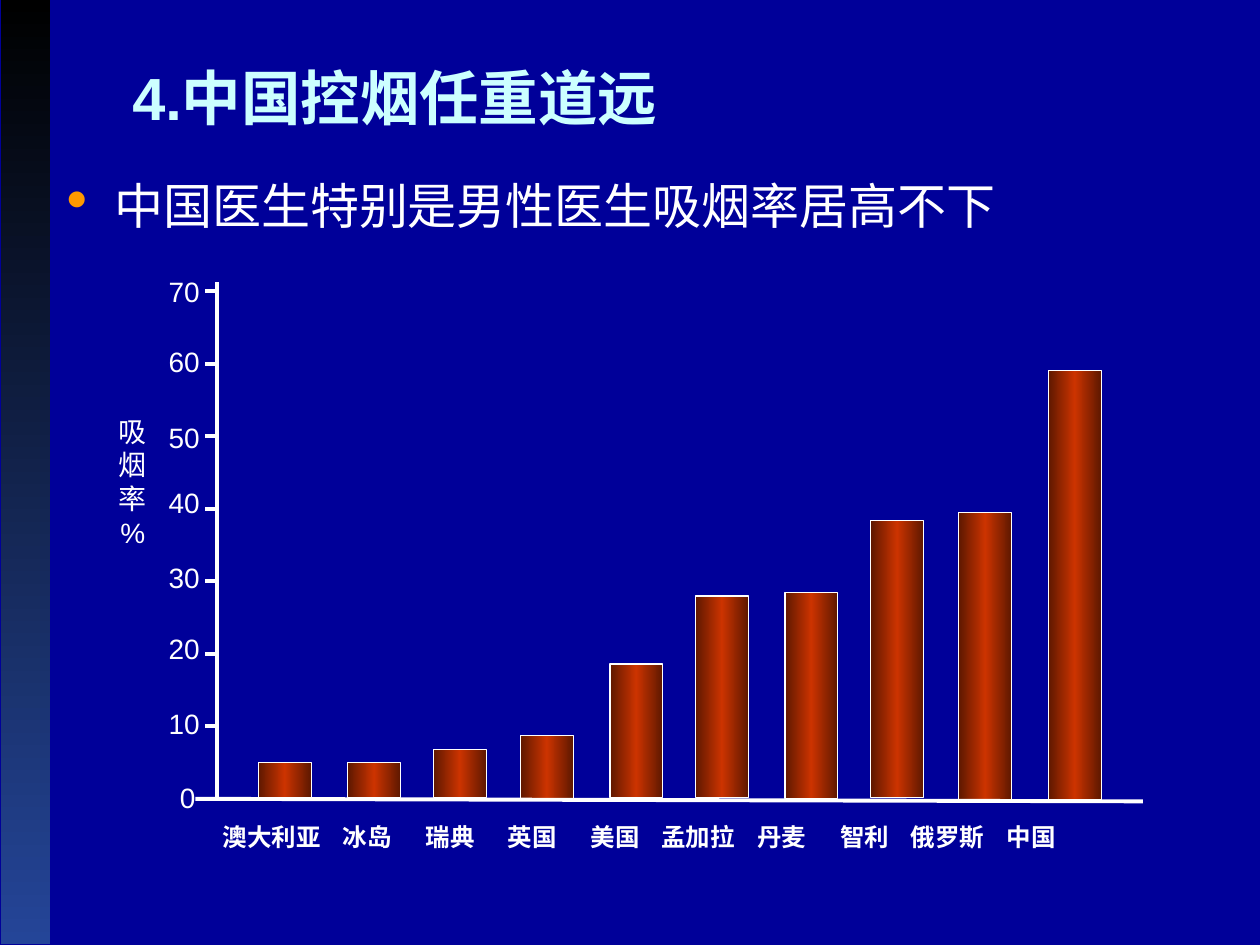
from copy import deepcopy

from lxml import etree
from pptx import Presentation
from pptx.dml.color import RGBColor
from pptx.enum import shapes, text
from pptx.oxml import ns
from pptx.util import Inches, Pt

COLORS = {
    "background": "000099", "white": "FFFFFF", "title": "CCFFFF", "bullet": "FF9900",
    "black": "000000", "strip": "244598", "bar_edge": "5E1800", "bar_middle": "CC3300",
}


def add_text(words, left, top, width, height, size, color="white", bold=False):
    """Add a wrapped one-paragraph text box and return it with its paragraph."""
    box = slide.shapes.add_textbox(Inches(left), Inches(top), Inches(width), Inches(height))
    box.text_frame.word_wrap = True
    paragraph = box.text_frame.paragraphs[0]
    run = paragraph.add_run()
    run.text = words
    run.font.name = "Arial"
    run.font.size = Pt(size)
    run.font.bold = bold
    run.font.color.rgb = RGBColor.from_string(COLORS[color])
    return box, paragraph


def add_gradient_box(left, top, width, height, stop_colors):
    """Add a rectangle whose gradient runs evenly through the given colours."""
    shape = slide.shapes.add_shape(
        shapes.MSO_SHAPE.RECTANGLE, Inches(left), Inches(top), Inches(width), Inches(height))
    shape.shadow.inherit = False
    shape.fill.gradient()
    shape.fill.gradient_angle = 0
    stop_list = shape._element.spPr.find(".//" + ns.qn("a:gsLst"))
    while len(stop_list) < len(stop_colors):
        stop_list.append(deepcopy(stop_list[0]))
    for index, stop in enumerate(stop_list):
        stop.set("pos", str(100000 * index // (len(stop_colors) - 1)))
    for stop, color in zip(shape.fill.gradient_stops, stop_colors):
        stop.color.rgb = RGBColor.from_string(COLORS[color])
    return shape


presentation = Presentation()
presentation.slide_width, presentation.slide_height = Inches(10), Inches(7.5)
slide = presentation.slides.add_slide(presentation.slide_layouts[6])
slide.background.fill.solid()
slide.background.fill.fore_color.rgb = RGBColor.from_string(COLORS["background"])

# Side strip, turned so that its gradient runs downwards
strip = add_gradient_box(-3.55, 3.55, 7.5, 0.39, ["black", "strip"])
strip.rotation = 90
strip.line.fill.background()

# Title
title, paragraph = add_text("4.中国控烟任重道远", 1, 0.17, 9, 1.19, 34, "title", True)
title.text_frame.vertical_anchor = text.MSO_ANCHOR.MIDDLE
title.text_frame.margin_left = Inches(0.05)
title.text_frame.margin_right = Inches(0.01)

# Bullet line
box, paragraph = add_text("中国医生特别是男性医生吸烟率居高不下", 0.43, 1.38, 9, 0.46, 28)
paragraph.line_spacing = 0.95
properties = paragraph._p.get_or_add_pPr()
properties.set("marL", str(Inches(0.38)))
properties.set("indent", str(-Inches(0.38)))
bullet_color = etree.SubElement(properties, ns.qn("a:buClr"))
etree.SubElement(bullet_color, ns.qn("a:srgbClr"), val=COLORS["bullet"])
etree.SubElement(properties, ns.qn("a:buSzPct"), val="125000")
etree.SubElement(properties, ns.qn("a:buChar"), char="•")

# Value axis title, one character a line
box, paragraph = add_text("吸烟率%", 0.77, 3.24, 0.57, 1.17, 16)
paragraph.alignment = text.PP_ALIGN.CENTER

# Country names, set on tab stops
countries = ["澳大利亚", "冰岛", "瑞典", "英国", "美国", "孟加拉", "丹麦", "智利", "俄罗斯", "中国"]
box, paragraph = add_text("\t".join(countries), 1.67, 6.45, 7.96, 0.36, 14, bold=True)
paragraph.line_spacing = 1.1
tab_list = etree.SubElement(paragraph._p.get_or_add_pPr(), ns.qn("a:tabLst"))
for position in [0.95, 1.61, 2.26, 2.92, 3.48, 4.24, 4.9, 5.46, 6.22]:
    etree.SubElement(tab_list, ns.qn("a:tab"), pos=str(Inches(position)), algn="l")

# Bars: left, top, height
bars = [
    (2.05, 6.05, 0.28), (2.76, 6.05, 0.28), (3.44, 5.95, 0.38), (4.13, 5.84, 0.5),
    (4.84, 5.27, 1.06), (5.52, 4.73, 1.6), (6.23, 4.7, 1.64), (6.91, 4.13, 2.2),
    (7.61, 4.07, 2.28), (8.32, 2.94, 3.41),
]
for left, top, height in bars:
    bar = add_gradient_box(left, top, 0.42, height, ["bar_edge", "bar_middle", "bar_edge"])
    bar.line.color.rgb = RGBColor.from_string(COLORS["white"])
    bar.line.width = Pt(0.75)

# Axes and ticks
axis_x, axis_bottom, tick_gap = 1.72, 6.34, 0.5757
lines = [(1.55, axis_bottom, 9.07, 6.36), (axis_x, 2.24, axis_x, axis_bottom)]
for index in range(8):
    tick_y = axis_bottom - index * tick_gap
    lines.append((axis_x, tick_y, 1.63, tick_y))
for ends in lines:
    line = slide.shapes.add_connector(
        shapes.MSO_CONNECTOR.STRAIGHT, *[Inches(value) for value in ends])
    line.line.color.rgb = RGBColor.from_string(COLORS["white"])
    line.line.width = Pt(2.25)
    etree.SubElement(line._element.spPr, ns.qn("a:effectLst"))

# Value labels
for index, top in enumerate([6.12, 5.53, 4.94, 4.37, 3.78, 3.26, 2.66, 2.1]):
    left = 1.24 if index else 1.33
    box, paragraph = add_text(str(index * 10), left, top, 0.48, 0.39, 16)
    paragraph.line_spacing = 1.1

presentation.save("out.pptx")
